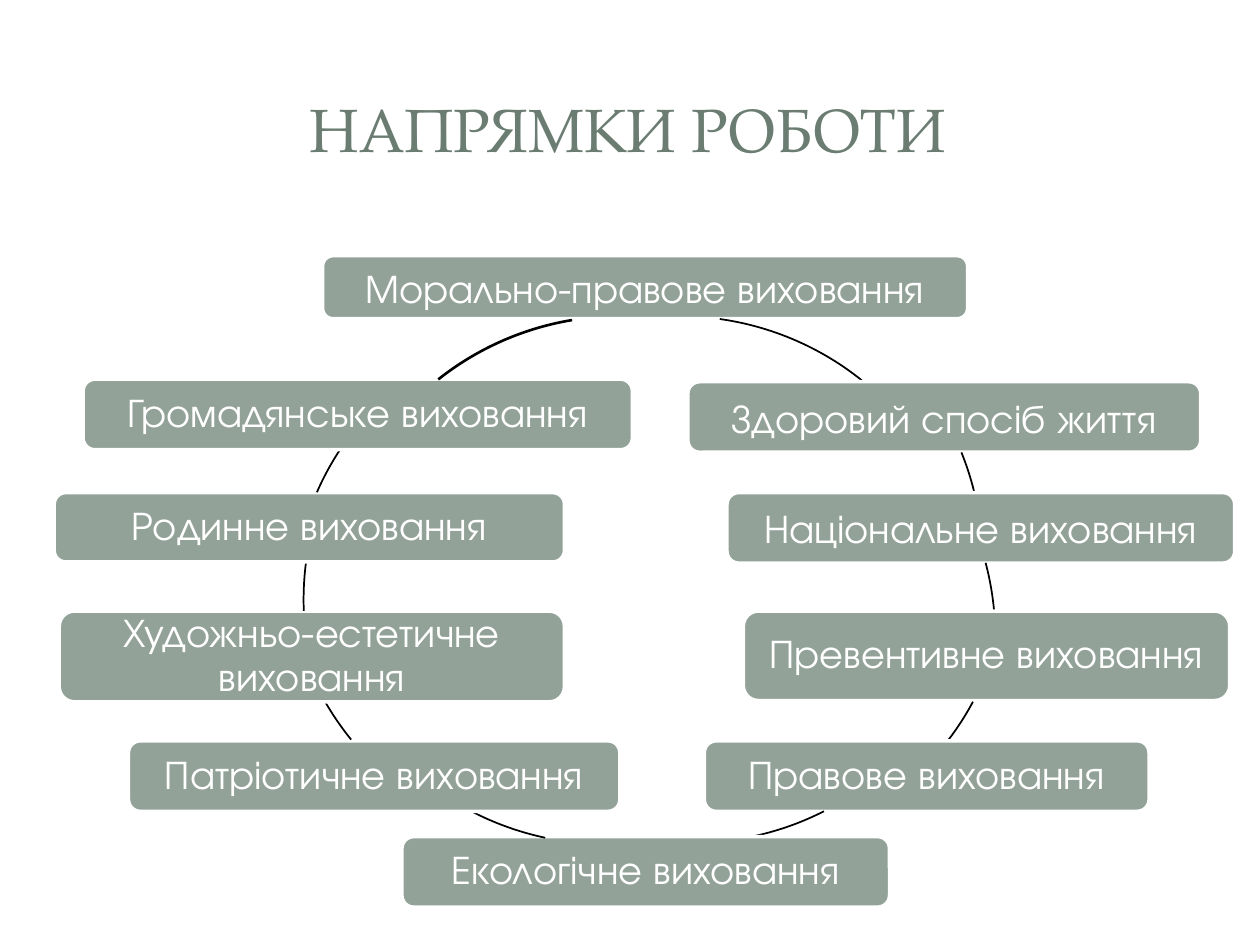
from dataclasses import dataclass
from pptx import Presentation
from pptx import util as u
from pptx.dml.color import RGBColor
from pptx.enum import shapes, text

SCALE = 9144


@dataclass(frozen=True)
class Theme:
    sage: str = "93A299"
    moss: str = "6B7D72"
    white: str = "FFFFFF"
    black: str = "000000"
    head: str = "TeX Gyre Pagella"
    body: str = "TeX Gyre Adventor"
    big: int = 35
    small: int = 23


class Deck:
    def __init__(self, theme, wide, high):
        self.theme = theme
        self.prs = Presentation()
        self.prs.slide_width, self.prs.slide_height = self.px(wide, high)
        self.slide = self.prs.slides.add_slide(self.prs.slide_layouts[6])

    def px(self, *vals):
        return [u.Emu(v * SCALE) for v in vals]

    def shape(self, kind, box):
        item = self.slide.shapes.add_shape(kind, *self.px(*box))
        item.shadow.inherit = False
        return item

    def line(self, item, tone, width):
        item.line.color.rgb = RGBColor.from_string(tone)
        item.line.width = u.Pt(width)

    def label(self, item, words, font, size, tone, inset, gap=1.0):
        frame = item.text_frame
        look = {"word_wrap": True, "vertical_anchor": text.MSO_ANCHOR.MIDDLE}
        for side in ("left", "right", "top", "bottom"):
            look["margin_" + side] = u.Emu(inset * SCALE)
        for key, val in look.items():
            setattr(frame, key, val)
        para = frame.paragraphs[0]
        para.text = words
        form = {"alignment": text.PP_ALIGN.CENTER, "line_spacing": gap}
        for key, val in form.items():
            setattr(para, key, val)
        face = para.runs[0].font
        for key, val in {"name": font, "size": u.Pt(size)}.items():
            setattr(face, key, val)
        face.color.rgb = RGBColor.from_string(tone)

    def title(self, words, box):
        t = self.theme
        item = self.slide.shapes.add_textbox(*self.px(*box))
        self.label(item, words, t.head, t.big, t.moss, 5)

    def card(self, words, box, gap):
        t = self.theme
        item = self.shape(shapes.MSO_SHAPE.ROUNDED_RECTANGLE, box)
        item.fill.solid()
        item.fill.fore_color.rgb = RGBColor.from_string(t.sage)
        self.line(item, t.white, 2)
        self.label(item, words, t.body, t.small, t.white, 12, gap)

    def arc(self, left, top, start, end, width):
        item = self.shape(shapes.MSO_SHAPE.ARC, (left, top, 464, 464))
        for i, angle in enumerate((start, end)):
            item.adjustments[i] = angle * 0.6
        item.fill.background()
        self.line(item, self.theme.black, width)

    def save(self):
        self.prs.save("out.pptx")


CARDS = [
    ("Морально-правове виховання", (256, 203, 512, 50), 1.0),
    ("Здоровий спосіб життя", (546, 303, 407, 56), 1.0),
    ("Національне виховання", (577, 391, 403, 56), 1.0),
    ("Превентивне виховання", (590, 485, 386, 71), 0.9),
    ("Правове виховання", (559, 588, 353, 56), 0.9),
    ("Екологічне виховання", (319, 664, 387, 56), 0.9),
    ("Патріотичне виховання", (102, 588, 390, 56), 0.9),
    ("Художньо-естетичне виховання", (47, 485, 401, 72), 0.9),
    ("Родинне виховання", (43, 391, 405, 55), 0.9),
    ("Громадянське виховання", (66, 301, 436, 56), 0.9),
]
ARCS = [
    (307, 251, 278, 308.7, 1),
    (316, 214, 338, 346, 1),
    (326, 274, 345.2, 354.8, 1),
    (336, 215, 28.3, 37.3, 1),
    (317, 205, 63.1, 78.8, 1),
    (249, 206, 102, 117.2, 1),
    (227, 209, 141, 150, 1),
    (241, 244, 177.8, 187.4, 1),
    (232, 252, 203.7, 213.2, 1),
    (260, 251, 231.6, 260.6, 1.5),
]


def main():
    deck = Deck(Theme(), 1000, 750)
    deck.title("НАПРЯМКИ РОБОТИ", (47, 45, 903, 114))
    for card, arc in zip(CARDS, ARCS):
        deck.card(*card)
        deck.arc(*arc)
    deck.save()


if __name__ == "__main__":
    main()
